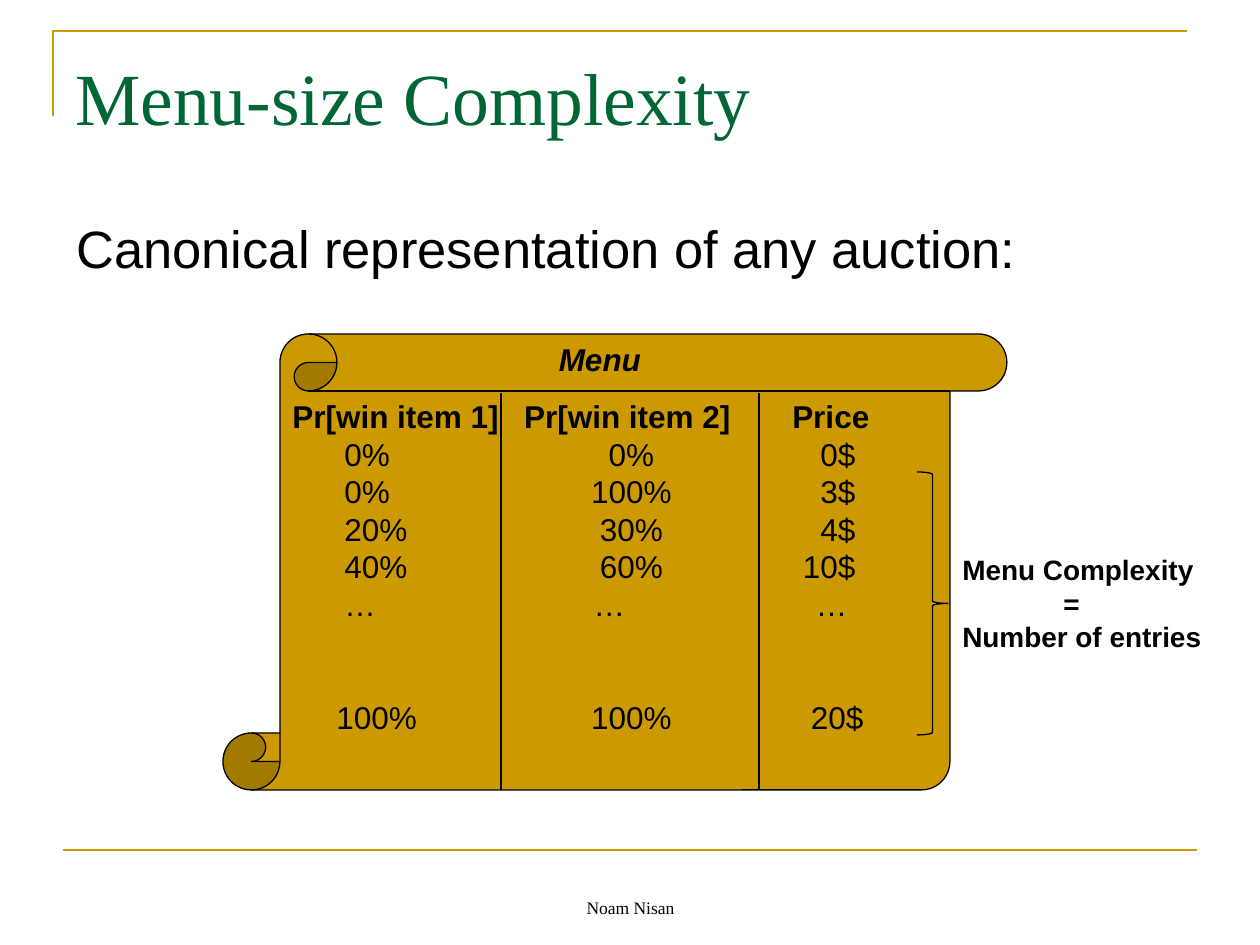
from lxml import etree
from pptx import Presentation
from pptx.dml.color import RGBColor
from pptx.enum.shapes import MSO_CONNECTOR, MSO_SHAPE
from pptx.enum.text import MSO_ANCHOR, PP_ALIGN
from pptx.oxml.ns import qn
from pptx.util import Emu, Pt

PX = 914400 // 126
GOLD = RGBColor(0xCC, 0x99, 0x00)
GREEN = RGBColor(0x00, 0x66, 0x33)
BLACK = RGBColor(0x00, 0x00, 0x00)
SANS, SERIF = "Arial", "Times New Roman"
TOP, BOTTOM = MSO_ANCHOR.TOP, MSO_ANCHOR.BOTTOM
LEFT, CENTER = PP_ALIGN.LEFT, PP_ALIGN.CENTER
STRAIGHT = MSO_CONNECTOR.STRAIGHT
SCROLL, BRACE = MSO_SHAPE.VERTICAL_SCROLL, MSO_SHAPE.RIGHT_BRACE

# Content: menu entries, then the tab stops (px) that hold their columns
HEADER = ("Pr[win item 1]", "Pr[win item 2]", "Price")
ENTRIES = [
    ("0%", "0%", "0$"),
    ("0%", "100%", "3$"),
    ("20%", "30%", "4$"),
    ("40%", "60%", "10$"),
    ("…", "…", "…"),
    ("100%", "100%", "20$"),
]
HEADER_STOPS = (("ctr", 335), ("r", 577))
ENTRY_STOPS = (("l", 52), ("ctr", 339), ("r", 563))
DOTS_STOPS = (("l", 52), ("ctr", 317), ("r", 555))
LAST_STOPS = (("l", 44), ("ctr", 339), ("r", 571))
COMPLEXITY = [("Menu Complexity", 0), ("=", 101), ("Number of entries", 0)]
DIVIDERS = (501, 759)
ROW_PITCH, NOTE_PITCH = 21.5, 19.1


def px(value):
    return Emu(value * PX)


def style(paragraph, size, font=SANS, color=BLACK, bold=False, italic=False):
    paragraph.font.size = Pt(size)
    paragraph.font.name = font
    paragraph.font.bold = bold
    paragraph.font.italic = italic
    paragraph.font.color.rgb = color


def add_text(slide, box, text, size, font=SANS, color=BLACK, align=LEFT,
             anchor=TOP, bold=False, italic=False):
    frame = slide.shapes.add_textbox(*map(px, box)).text_frame
    frame.word_wrap = True
    frame.vertical_anchor = anchor
    paragraph = frame.paragraphs[0]
    paragraph.text = text
    paragraph.alignment = align
    style(paragraph, size, font, color, bold, italic)
    return frame


def add_line(slide, start, end, color, width):
    line = slide.shapes.add_connector(STRAIGHT, *map(px, start + end))
    line.line.color.rgb = color
    line.line.width = Pt(width)
    etree.SubElement(line._element.spPr, qn("a:effectLst"))


def add_gold_shape(slide, preset, box):
    shape = slide.shapes.add_shape(preset, *map(px, box))
    shape.shadow.inherit = False
    shape.fill.solid()
    shape.fill.fore_color.rgb = GOLD
    shape.line.color.rgb = BLACK
    shape.line.width = Pt(0.75)
    return shape


def next_paragraph(frame, index):
    return frame.add_paragraph() if index else frame.paragraphs[0]


def set_tabs(paragraph, stops):
    tabs = etree.SubElement(paragraph._p.get_or_add_pPr(), qn("a:tabLst"))
    for align, position in stops:
        etree.SubElement(tabs, qn("a:tab"), pos=str(px(position)), algn=align)


def add_menu_row(frame, index, cells, stops, bold=False, gap=0):
    paragraph = next_paragraph(frame, index)
    lead = "\t" if len(stops) == len(cells) else ""
    paragraph.add_run().text = lead + "\t".join(cells)
    paragraph.alignment = LEFT
    paragraph.line_spacing = Pt(ROW_PITCH)
    paragraph.space_before = Pt(gap)
    set_tabs(paragraph, stops)
    style(paragraph, 18, bold=bold)


def main():
    presentation = Presentation()
    presentation.slide_width, presentation.slide_height = px(1260), px(945)
    slide = presentation.slides.add_slide(presentation.slide_layouts[6])

    # Frame: corner at the top, rule at the bottom
    builder = slide.shapes.build_freeform(53, 116, scale=PX)
    builder.add_line_segments([(53, 31), (1187, 31)], close=False)
    corner = builder.convert_to_shape()
    corner.shadow.inherit = False
    corner.fill.background()
    corner.line.color.rgb = GOLD
    corner.line.width = Pt(1.5)
    add_line(slide, (63, 850), (1197, 850), GOLD, 1.5)

    # Title, statement and footer
    title = add_text(slide, (63, 38, 1134, 157), "Menu-size Complexity", 42,
                     SERIF, GREEN)
    title.margin_top = px(14)
    body = add_text(slide, (64, 204, 1134, 624),
                    "Canonical representation of any auction:", 30)
    body.margin_top = px(12)
    add_text(slide, (431, 861, 399, 63), "Noam Nisan", 10, SERIF,
             align=CENTER, anchor=BOTTOM)

    # Scroll with the menu
    scroll = add_gold_shape(slide, SCROLL, (223, 334, 784, 456))
    frame = scroll.text_frame
    frame.word_wrap = True
    frame.vertical_anchor = TOP
    add_menu_row(frame, 0, HEADER, HEADER_STOPS, bold=True)
    for index, cells in enumerate(ENTRIES, 1):
        last = index == len(ENTRIES)
        stops = (LAST_STOPS if last else
                 DOTS_STOPS if cells[0] == "…" else ENTRY_STOPS)
        add_menu_row(frame, index, cells, stops, gap=2 * ROW_PITCH * last)
    for x in DIVIDERS:
        add_line(slide, (x, 393), (x, 790), BLACK, 0.75)

    # Brace and its explanation
    add_gold_shape(slide, BRACE, (917, 472, 31, 263))
    note = slide.shapes.add_textbox(*map(px, (950, 547, 275, 115))).text_frame
    note.word_wrap = True
    for index, (text, indent) in enumerate(COMPLEXITY):
        paragraph = next_paragraph(note, index)
        paragraph.text = text
        paragraph.line_spacing = Pt(NOTE_PITCH)
        paragraph._p.get_or_add_pPr().set("marL", str(px(indent)))
        style(paragraph, 16, bold=True)

    # Scroll heading
    add_text(slide, (481, 334, 238, 50), "Menu", 18, align=CENTER,
             bold=True, italic=True)

    presentation.save("out.pptx")


if __name__ == "__main__":
    main()
